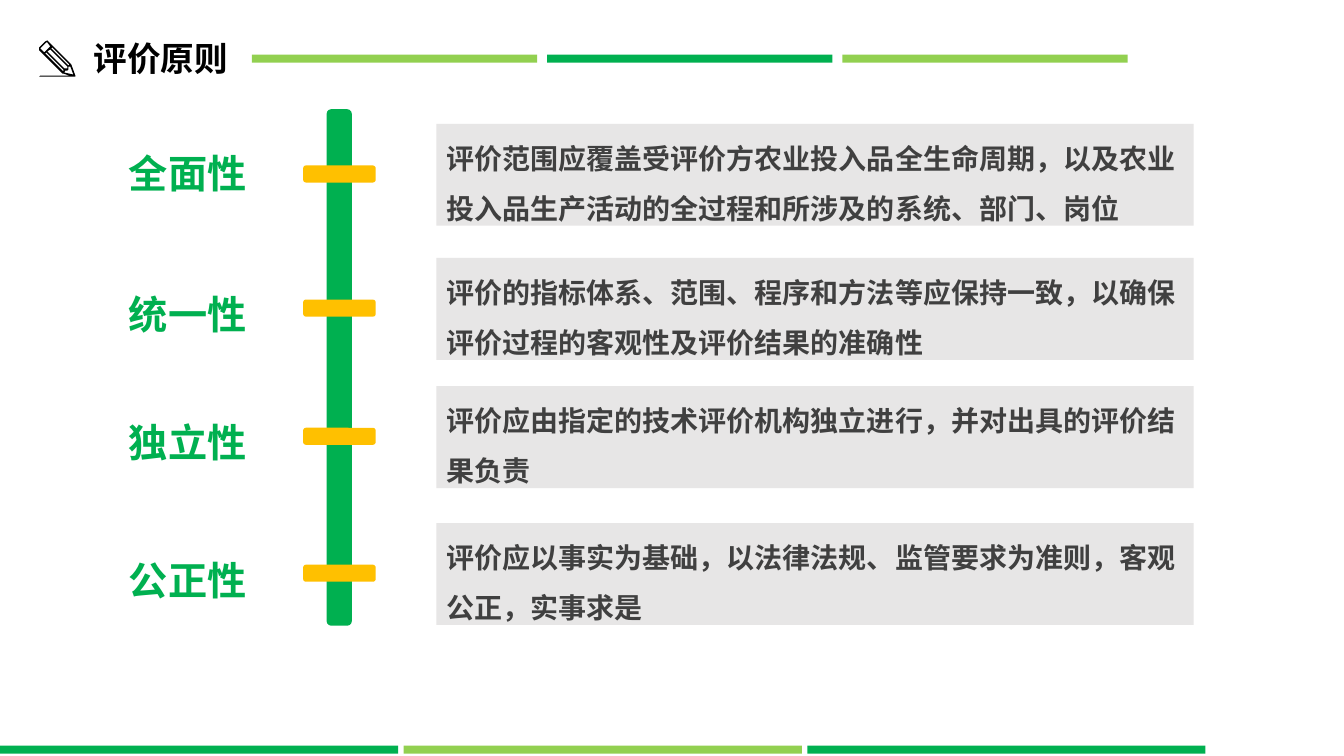
from dataclasses import dataclass
from typing import NamedTuple

from lxml.etree import SubElement
from pptx import Presentation
from pptx.dml.color import RGBColor
from pptx.enum.shapes import MSO_SHAPE
from pptx.enum.text import MSO_ANCHOR, MSO_AUTO_SIZE, PP_ALIGN
from pptx.oxml.ns import qn
from pptx.util import Cm, Pt


@dataclass(frozen=True)
class Theme:
    """Colours, font and type sizes of the slide."""
    green: str = "00B050"
    lime: str = "92D050"
    amber: str = "FFC000"
    panel: str = "E7E6E6"
    body: str = "404040"
    black: str = "000000"
    font: str = "Noto Sans CJK SC"
    title_size: int = 24
    label_size: int = 28
    body_size: int = 20


class Box(NamedTuple):
    """A rectangle in centimetres."""
    left: float
    top: float
    width: float
    height: float

    def lengths(self):
        """Return the four measures as lengths."""
        return [Cm(measure) for measure in self]


class Principle(NamedTuple):
    """One principle with its panel top and the label's drop below it."""
    label: str
    meaning: str
    top: float
    label_drop: float


THEME = Theme()
PRINCIPLES = [
    Principle("全面性", "评价范围应覆盖受评价方农业投入品全生命周期，以及农业投入品生产活动的全过程和所涉及的系统、部门、岗位", 3.12, 0.51),
    Principle("统一性", "评价的指标体系、范围、程序和方法等应保持一致，以确保评价过程的客观性及评价结果的准确性", 6.5, 0.69),
    Principle("独立性", "评价应由指定的技术评价机构独立进行，并对出具的评价结果负责", 9.73, 0.69),
    Principle("公正性", "评价应以事实为基础，以法律法规、监管要求为准则，客观公正，实事求是", 13.18, 0.72),
]
PENCIL_GRID = 36
PENCIL_CONTOURS = [
    [(36, 36), (36, 35), (32, 24), (13, 5), (9, 1), (8, 0), (6, 1), (0, 7), (0, 10),
     (4, 14), (23, 33), (24, 33), (30, 35), (1, 35), (0, 35.5), (1, 36)],
    [(34, 34), (25, 32), (26, 30), (28, 30), (29, 29), (29, 26), (31, 26)],
    [(13, 7), (30, 24), (29, 25), (12, 8)],
    [(11, 9), (28, 26), (28, 28), (25, 28), (8, 11)],
    [(1, 8), (7, 2), (8, 2), (11, 6), (5, 12)],
    [(7, 12), (24, 29), (24, 31), (6, 13)],
]


def paint(shape, colour):
    """Give a shape a flat fill without line or shadow."""
    shape.shadow.inherit = False
    shape.fill.solid()
    shape.fill.fore_color.rgb = RGBColor.from_string(colour)
    shape.line.fill.background()


def add_block(slide, box, colour, preset=MSO_SHAPE.RECTANGLE):
    """Add a flat preset shape."""
    block = slide.shapes.add_shape(preset, *box.lengths())
    paint(block, colour)
    return block


def write(frame, words, size, colour):
    """Write one bold, left-aligned run and return its paragraph."""
    paragraph = frame.paragraphs[0]
    paragraph.alignment = PP_ALIGN.LEFT
    run = paragraph.add_run()
    run.text = words
    run.font.size = Pt(size)
    run.font.bold = True
    run.font.color.rgb = RGBColor.from_string(colour)
    run.font.name = THEME.font
    SubElement(run.font._element, qn("a:ea"), typeface=THEME.font)
    return paragraph


def add_stripes(slide, box, gap, colours):
    """Split a box into equal stripes, one for each colour."""
    width = (box.width - gap * (len(colours) - 1)) / len(colours)
    for index, colour in enumerate(colours):
        left = box.left + index * (width + gap)
        add_block(slide, Box(left, box.top, width, box.height), colour)


def add_pencil(slide, box):
    """Draw the pencil icon with its inner cut-outs."""
    left, top, width, _ = box.lengths()
    outline, *cutouts = PENCIL_CONTOURS
    builder = slide.shapes.build_freeform(*outline[0], scale=width / PENCIL_GRID)
    builder.add_line_segments(outline[1:])
    for cutout in cutouts:
        builder.move_to(*cutout[0])
        builder.add_line_segments(cutout[1:])
    paint(builder.convert_to_shape(left, top), THEME.black)


def add_header(slide, box):
    """Place the pencil, the title and the header stripes."""
    title = slide.shapes.title
    title.left, title.top, title.width, title.height = Box(
        box.left + 1.12, box.top, 15.52, box.height).lengths()
    title.text_frame.auto_size = MSO_AUTO_SIZE.SHAPE_TO_FIT_TEXT
    title.text_frame.vertical_anchor = MSO_ANCHOR.TOP
    write(title.text_frame, "评价原则", THEME.title_size, THEME.black)
    add_pencil(slide, Box(box.left, box.top + 0.18, 0.91, 0.91))
    stripes = Box(box.left + 5.36, box.top + 0.54, box.width - 5.36, 0.2)
    add_stripes(slide, stripes, 0.25, [THEME.lime, THEME.green, THEME.lime])


def add_principle(slide, box, principle):
    """Place a label, its marker on the spine and its panel."""
    label = slide.shapes.add_textbox(
        *Box(box.left, box.top + principle.label_drop, 3.48, 1.45).lengths())
    label.text_frame.word_wrap = False
    label.text_frame.auto_size = MSO_AUTO_SIZE.SHAPE_TO_FIT_TEXT
    write(label.text_frame, principle.label, THEME.label_size, THEME.green)
    add_block(slide, Box(box.left + 4.64, box.top + 1.05, 1.83, 0.43),
              THEME.amber, MSO_SHAPE.ROUNDED_RECTANGLE)
    panel = add_block(slide, Box(box.left + 8, box.top, box.width - 8, box.height), THEME.panel)
    panel.text_frame.word_wrap = True
    panel.text_frame.vertical_anchor = MSO_ANCHOR.MIDDLE
    meaning = write(panel.text_frame, principle.meaning, THEME.body_size, THEME.body)
    meaning.line_spacing = 1.5


def add_principles(slide, box):
    """Place the spine and every principle along it."""
    spine = add_block(slide, Box(box.left + 5.25, box.top, 0.6, box.height),
                      THEME.green, MSO_SHAPE.ROUNDED_RECTANGLE)
    spine.line.color.rgb = RGBColor.from_string(THEME.green)
    spine.line.width = Pt(1)
    for principle in PRINCIPLES:
        add_principle(slide, Box(box.left, principle.top, box.width, 2.57), principle)


def main():
    """Build and save the slide."""
    deck = Presentation()
    deck.slide_width, deck.slide_height = Cm(33.87), Cm(19.05)
    slide = deck.slides.add_slide(deck.slide_layouts.get_by_name("Title Only"))
    add_header(slide, Box(0.99, 0.84, 27.43, 1.27))
    add_principles(slide, Box(3, 2.77, 27.08, 12.98))
    add_stripes(slide, Box(0, 18.79, 30.38, 0.2), 0.14, [THEME.green, THEME.lime, THEME.green])
    deck.save("out.pptx")


if __name__ == "__main__":
    main()
